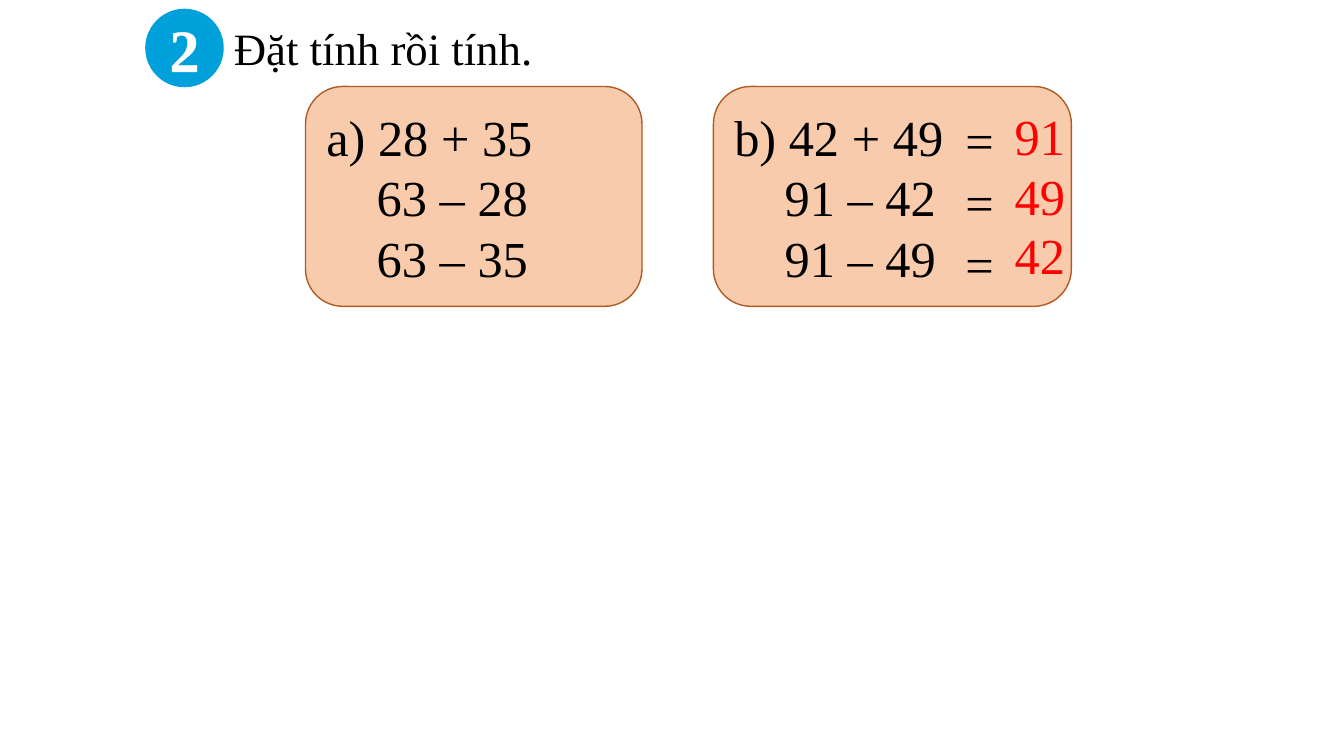
"""Build the exercise slide on column addition and subtraction."""
from lxml.etree import fromstring
from pptx import Presentation
from pptx.dml.color import RGBColor
from pptx.enum.shapes import MSO_SHAPE
from pptx.enum.text import MSO_ANCHOR, MSO_AUTO_SIZE, PP_ALIGN
from pptx.util import Cm, Pt

HUES = {"blue": "00A1DA", "peach": "F8CBAD", "rust": "AF5C24",
        "black": "000000", "white": "FFFFFF", "red": "FF0000"}
NS = "http://schemas.openxmlformats.org/drawingml/2006/main"


def write(shape, lines, size=36, hue="black", bold=False, align=PP_ALIGN.LEFT,
          anchor=MSO_ANCHOR.TOP, indent=0, space=1.0):
    frame = shape.text_frame
    frame.word_wrap = True
    frame.auto_size = MSO_AUTO_SIZE.NONE
    frame.vertical_anchor = anchor
    for i, line in enumerate(lines):
        para = frame.add_paragraph() if i else frame.paragraphs[0]
        if i and indent:
            para._p.get_or_add_pPr().set("marL", str(Cm(indent)))
        para.alignment = align
        para.line_spacing = space
        run = para.add_run()
        run.text = line
        run.font.name = "Times New Roman"
        run.font.size = Pt(size)
        run.font.bold = bold
        run.font.color.rgb = RGBColor.from_string(HUES[hue])
    return frame


deck = Presentation()
deck.slide_width, deck.slide_height = Cm(33.87), Cm(19.05)
slide = deck.slides.add_slide(deck.slide_layouts[5])
shapes = slide.shapes

badge = shapes.add_shape(MSO_SHAPE.OVAL, Cm(3.66), Cm(0.22), Cm(1.98), Cm(1.98))
badge.shadow.inherit = False
badge.fill.solid()
badge.fill.fore_color.rgb = RGBColor.from_string(HUES["blue"])
badge.line.fill.background()
frame = write(badge, ["2"], size=42.7, hue="white", bold=True,
              align=PP_ALIGN.CENTER, anchor=MSO_ANCHOR.MIDDLE)
edge = fromstring(f'<a:ln xmlns:a="{NS}" w="{Pt(1.45)}"><a:solidFill>'
                  f'<a:srgbClr val="{HUES["white"]}"/></a:solidFill></a:ln>')
frame.paragraphs[0].runs[0].font._element.insert(0, edge)

title = shapes.title
title.left, title.top, title.width, title.height = Cm(5.64), Cm(0.56), Cm(26.57), Cm(1.98)
write(title, ["Đặt tính rồi tính."], size=32, align=PP_ALIGN.JUSTIFY, space=0.9)

cards = [
    (7.7, 8.48, ["a) 28 + 35", "63 – 28", "63 – 35"]),
    (17.98, 9.02, ["b) 42 + 49", "91 – 42", "91 – 49"]),
]
for left, width, sums in cards:
    card = shapes.add_shape(MSO_SHAPE.ROUNDED_RECTANGULAR_CALLOUT,
                            Cm(left), Cm(2.18), Cm(width), Cm(5.54))
    for i, value in enumerate((-0.21, 0.5, 0.17)):
        card.adjustments[i] = value
    card.shadow.inherit = False
    card.fill.solid()
    card.fill.fore_color.rgb = RGBColor.from_string(HUES["peach"])
    card.line.color.rgb = RGBColor.from_string(HUES["rust"])
    card.line.width = Pt(1)
    write(card, sums, anchor=MSO_ANCHOR.MIDDLE, indent=1.27)

for row, answer in enumerate(["91", "49", "42"]):
    sign = shapes.add_textbox(Cm(24.08), Cm(2.63 + 1.56 * row), Cm(1.42), Cm(1.8))
    write(sign, ["="])
    total = shapes.add_textbox(Cm(25.32), Cm(2.53 + 1.5 * row), Cm(2.26), Cm(1.8))
    write(total, [answer], hue="red")

deck.save("out.pptx")
